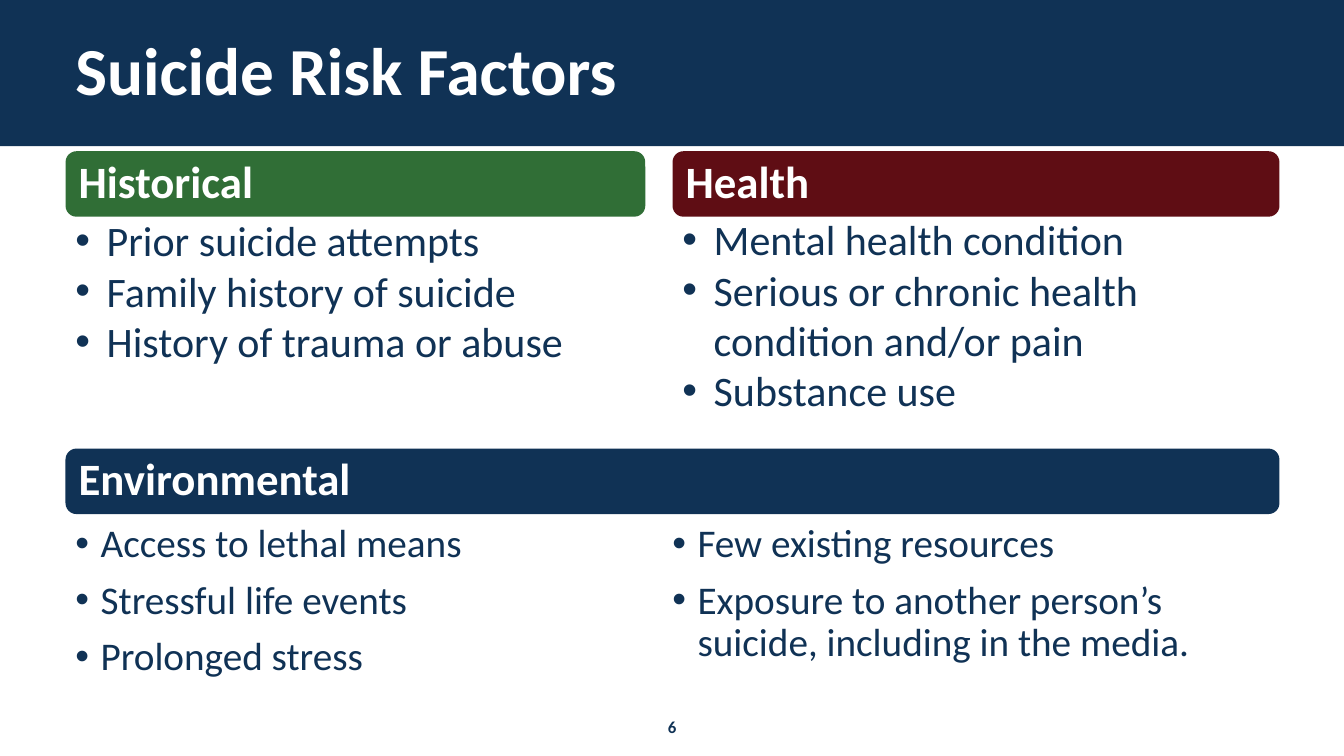
from pptx import Presentation
from pptx.dml.color import RGBColor
from pptx.enum.shapes import MSO_SHAPE
from pptx.enum.text import MSO_ANCHOR, PP_ALIGN
from pptx.oxml.ns import qn
from pptx.util import Inches, Pt
from lxml import etree

RECTANGLE = MSO_SHAPE.RECTANGLE
ROUNDED = MSO_SHAPE.ROUNDED_RECTANGLE
MIDDLE, TOP = MSO_ANCHOR.MIDDLE, MSO_ANCHOR.TOP
LEFT, CENTER = PP_ALIGN.LEFT, PP_ALIGN.CENTER
COLORS = {"navy": "103255", "green": "306E36", "maroon": "5F0D14", "white": "FFFFFF"}

presentation = Presentation()
presentation.slide_width = Inches(13.33)
presentation.slide_height = Inches(7.5)
slide = presentation.slides.add_slide(presentation.slide_layouts[6])


def add_block(box, fill=None, preset=RECTANGLE):
    lengths = [Inches(value) for value in box]
    if fill is None:
        return slide.shapes.add_textbox(*lengths)
    shape = slide.shapes.add_shape(preset, *lengths)
    shape.shadow.inherit = False
    shape.fill.solid()
    shape.fill.fore_color.rgb = RGBColor.from_string(COLORS[fill])
    shape.line.fill.background()
    return shape


def write(shape, lines, size, color, bold=False, anchor=MIDDLE, align=LEFT,
          spacing=None, before=0, indent=0):
    frame = shape.text_frame
    frame.word_wrap = True
    frame.vertical_anchor = anchor
    for index, line in enumerate(lines):
        paragraph = frame.paragraphs[0] if index == 0 else frame.add_paragraph()
        paragraph.alignment = align
        if spacing:
            paragraph.line_spacing = spacing
        if index and before:
            paragraph.space_before = Pt(before)
        if indent:
            properties = paragraph._p.get_or_add_pPr()
            properties.set("marL", str(Inches(indent)))
            properties.set("indent", str(-Inches(indent)))
            etree.SubElement(properties, qn("a:buFont")).set("typeface", "Arial")
            etree.SubElement(properties, qn("a:buChar")).set("char", "•")
        run = paragraph.add_run()
        run.text = line
        run.font.name = "Calibri"
        run.font.size = Pt(size)
        run.font.bold = bold
        run.font.color.rgb = RGBColor.from_string(COLORS[color])


add_block((0, 0, 13.33, 1.45), "navy")
write(add_block((0.65, 0.4, 12.04, 0.67)), ["Suicide Risk Factors"], 48, "white",
      bold=True, spacing=0.9)

headings = [
    ("Historical", "green", 0.65, 1.5, 5.75),
    ("Health", "maroon", 6.67, 1.5, 6.02),
    ("Environmental", "navy", 0.65, 4.45, 12.04),
]
for heading, fill, left, top, width in headings:
    bar = add_block((left, top, width, 0.65), fill, ROUNDED)
    write(bar, [heading], 32, "white", bold=True, spacing=0.9)

upper_lists = [
    ((0.65, 2.08, 5.88, 1.65),
     ["Prior suicide attempts", "Family history of suicide", "History of trauma or abuse"]),
    ((6.67, 2.07, 6.02, 2.15),
     ["Mental health condition", "Serious or chronic health condition and/or pain",
      "Substance use"]),
]
for box, factors in upper_lists:
    write(add_block(box), factors, 30, "navy", anchor=TOP, indent=0.31)

environmental_columns = [
    ["Access to lethal means", "Stressful life events", "Prolonged stress"],
    ["Few existing resources",
     "Exposure to another person’s suicide, including in the media."],
]
for column, factors in enumerate(environmental_columns):
    box = add_block((0.65 + column * 5.92, 5.15, 6.12, 1.7))
    write(box, factors, 28, "navy", anchor=TOP, spacing=0.9, before=10, indent=0.25)

write(add_block((6.09, 7.06, 1.15, 0.3)), ["6"], 12, "navy", bold=True,
      anchor=TOP, align=CENTER)

presentation.save("out.pptx")
